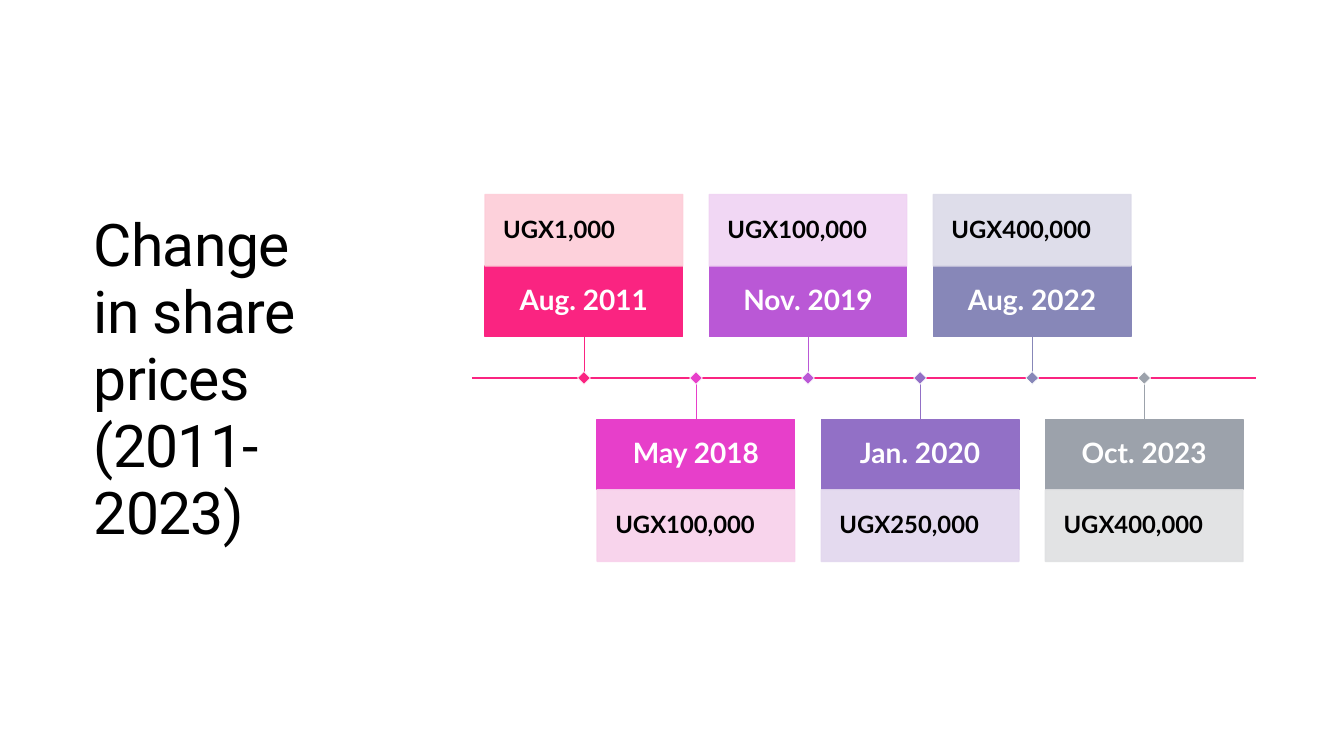
from lxml.etree import SubElement
from pptx import Presentation
from pptx.dml.color import RGBColor
from pptx.enum.shapes import MSO_CONNECTOR, MSO_SHAPE
from pptx.enum.text import MSO_ANCHOR, MSO_AUTO_SIZE, PP_ALIGN
from pptx.oxml.ns import qn
from pptx.util import Inches, Pt

COLORS = {
    "text": "000000", "paper": "FFFFFF", "axis": "FA2481",
    "pink": "FA2481", "pink tint": "FDCDD8",
    "magenta": "E73FCA", "magenta tint": "F8D0EB",
    "orchid": "BA58D6", "orchid tint": "F0D3F3",
    "violet": "9270C6", "violet tint": "E2D7EE",
    "slate": "8787B8", "slate tint": "DBDAE8",
    "grey": "9CA2AB", "grey tint": "DFE0E2",
}
PRICES = [
    ("Aug. 2011", "UGX1,000", "pink"),
    ("May 2018", "UGX100,000", "magenta"),
    ("Nov. 2019", "UGX100,000", "orchid"),
    ("Jan. 2020", "UGX250,000", "violet"),
    ("Aug. 2022", "UGX400,000", "slate"),
    ("Oct. 2023", "UGX400,000", "grey"),
]
CARD_WIDTH, DATE_HEIGHT, PRICE_HEIGHT = 1.96, 0.7, 0.71
STEM, MARKER = 0.41, 0.09


def rgb(name):
    return RGBColor.from_string(COLORS[name])


def add_line(slide, start, end, color, weight):
    line = slide.shapes.add_connector(
        MSO_CONNECTOR.STRAIGHT, *(Inches(v) for v in (*start, *end)))
    line.line.color.rgb = rgb(color)
    line.line.width = Pt(weight)
    SubElement(line._element.spPr, qn("a:effectLst"))


def add_box(slide, left, top, width, height, fill, outline, weight):
    box = slide.shapes.add_shape(
        MSO_SHAPE.RECTANGLE, *(Inches(v) for v in (left, top, width, height)))
    box.shadow.inherit = False
    box.fill.solid()
    box.fill.fore_color.rgb = rgb(fill)
    box.line.color.rgb = rgb(outline)
    box.line.width = Pt(weight)
    return box


def make_translucent(box, percent):
    for color in box._element.spPr.iter(qn("a:srgbClr")):
        SubElement(color, qn("a:alpha"), val=str(percent * 1000))


def write(box, text, size, color, align, inset):
    frame = box.text_frame
    frame.word_wrap = True
    frame.vertical_anchor = MSO_ANCHOR.MIDDLE
    frame.margin_left = frame.margin_right = Inches(inset)
    frame.margin_top = frame.margin_bottom = Inches(inset)
    paragraph = frame.paragraphs[0]
    paragraph.text = text
    paragraph.alignment = align
    paragraph.line_spacing = 0.9
    font = paragraph.font
    font.name, font.size, font.bold = "Lato", Pt(size), True
    font.color.rgb = rgb(color)


def add_card(slide, left, date_top, price_top, date, price, color):
    date_box = add_box(slide, left, date_top, CARD_WIDTH, DATE_HEIGHT, color, color, 1)
    write(date_box, date, 20, "paper", PP_ALIGN.CENTER, 0.11)
    tint = f"{color} tint"
    price_box = add_box(slide, left, price_top, CARD_WIDTH, PRICE_HEIGHT, tint, tint, 1)
    make_translucent(price_box, 90)
    write(price_box, price, 17, "text", PP_ALIGN.LEFT, 0.18)


def add_timeline(slide, left, axis_y, width):
    """Draw evenly spaced events, alternating above and below the axis."""
    add_line(slide, (left, axis_y), (left + width, axis_y), "axis", 1)
    step = width / (len(PRICES) + 1)
    for index, (date, price, color) in enumerate(PRICES):
        x = left + step * (index + 1)
        if index % 2 == 0:
            stem_end = axis_y - STEM
            date_top = stem_end - DATE_HEIGHT
            price_top = date_top - PRICE_HEIGHT
        else:
            stem_end = date_top = axis_y + STEM
            price_top = date_top + DATE_HEIGHT
        add_card(slide, x - CARD_WIDTH / 2, date_top, price_top, date, price, color)
        add_line(slide, (x, axis_y), (x, stem_end), color, 0.5)
        marker = add_box(slide, x - MARKER / 2, axis_y - MARKER / 2,
                         MARKER, MARKER, color, "paper", 0.5)
        marker.rotation = 45


def add_title(slide, left, top, width, height):
    title = slide.shapes.title
    title.left, title.top = Inches(left), Inches(top)
    title.width, title.height = Inches(width), Inches(height)
    frame = title.text_frame
    frame.text = "Change in share prices (2011-2023)"
    frame.word_wrap = True
    frame.auto_size = MSO_AUTO_SIZE.NONE
    frame.vertical_anchor = MSO_ANCHOR.MIDDLE
    paragraph = frame.paragraphs[0]
    paragraph.alignment = PP_ALIGN.LEFT
    paragraph.line_spacing = 0.95
    font = paragraph.font
    font.name, font.size = "Roboto", Pt(42)
    font.color.rgb = rgb("text")
    paragraph.runs[0]._r.get_or_add_rPr().set("spc", "-50")


def main():
    deck = Presentation()
    deck.slide_width, deck.slide_height = Inches(13.33), Inches(7.5)
    slide = deck.slides.add_slide(deck.slide_layouts.get_by_name("Title Only"))
    add_title(slide, 0.83, 0.85, 2.63, 5.84)
    add_timeline(slide, 4.68, 3.75, 7.78)
    deck.save("out.pptx")


if __name__ == "__main__":
    main()
